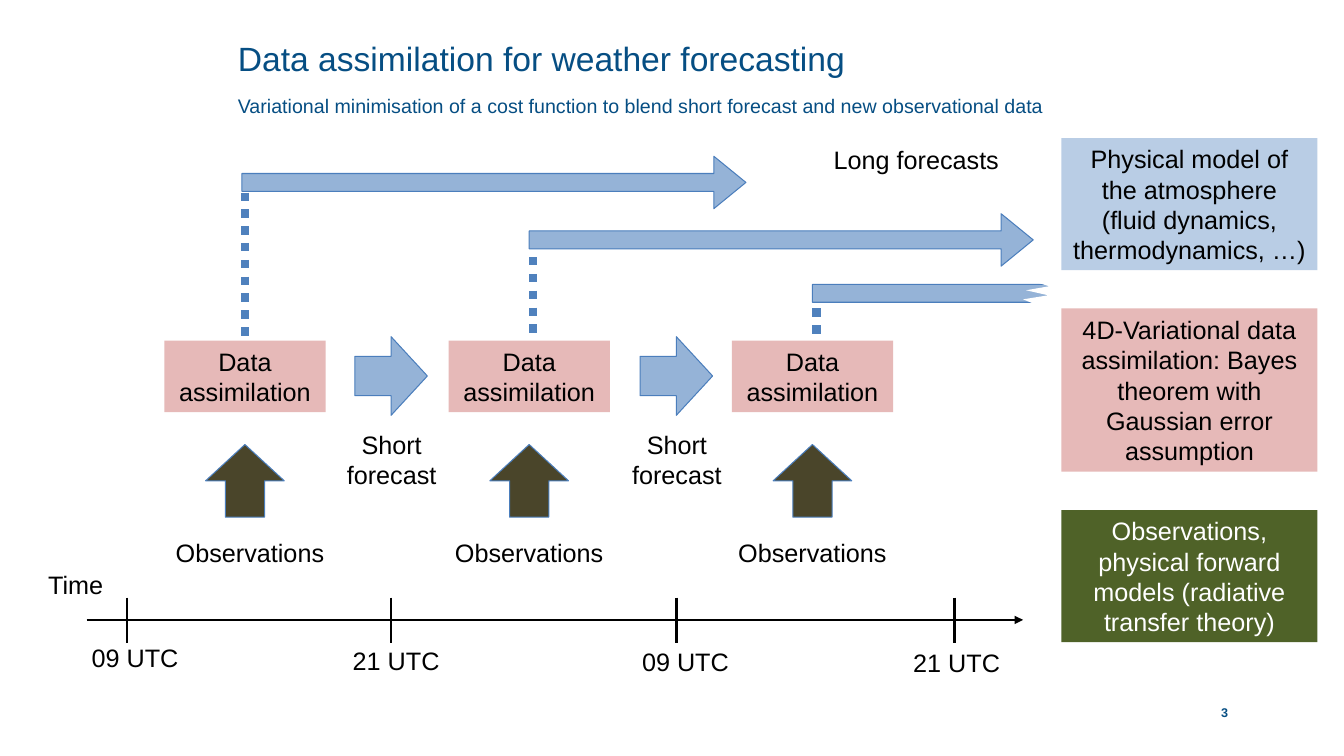
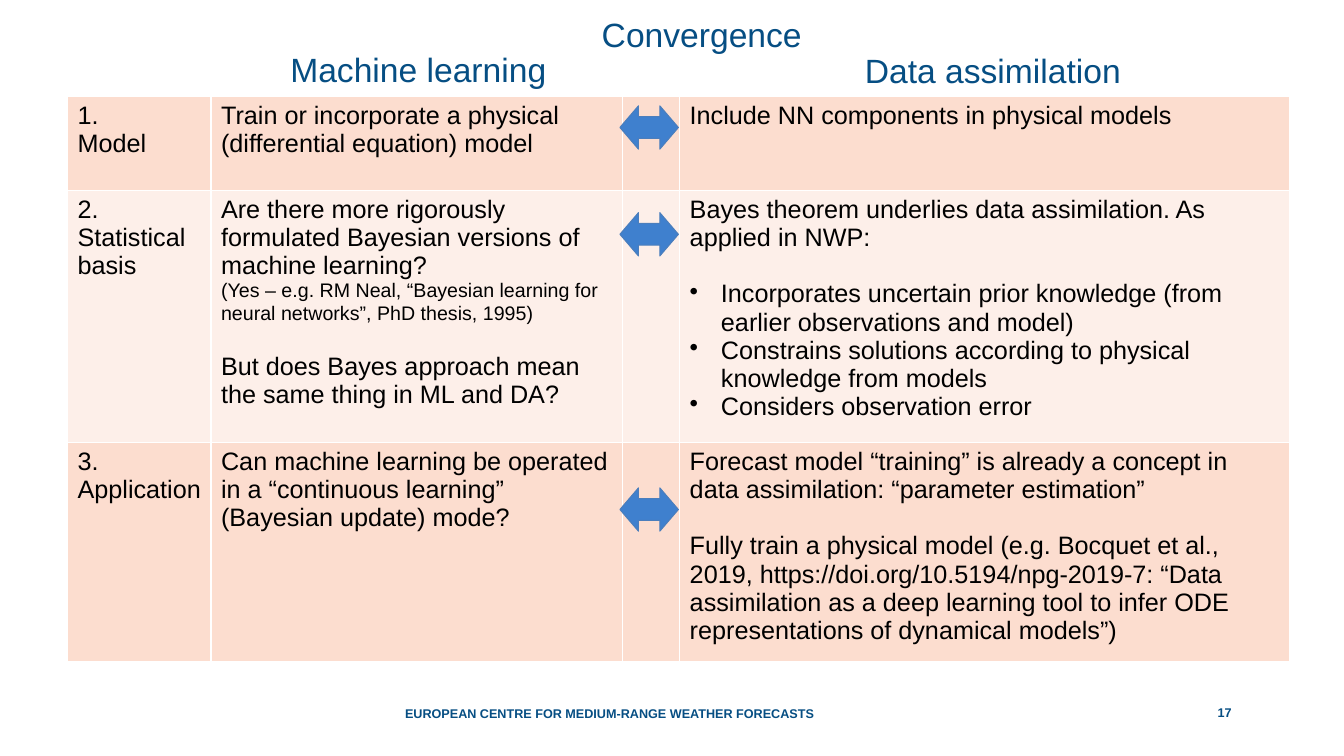
from dataclasses import dataclass

from pptx import Presentation
from pptx.dml.color import RGBColor
from pptx.enum.dml import MSO_LINE
from pptx.enum.shapes import MSO_CONNECTOR, MSO_SHAPE
from pptx.enum.text import MSO_ANCHOR, PP_ALIGN
from pptx.oxml.ns import qn
from pptx.util import Inches, Pt
from lxml.etree import SubElement

WIDTH, HEIGHT = Inches(13.33), Inches(7.5)
COLS, ROWS = 40, 30


@dataclass(frozen=True)
class Theme:
    font: str = "Arial"
    navy: str = "064E83"
    black: str = "000000"
    white: str = "FFFFFF"
    pink: str = "E6B9B8"
    sky: str = "B9CDE5"
    green: str = "4F6228"
    brown: str = "4A452A"
    arrow: str = "95B3D7"
    link: str = "3F80CE"
    outline: str = "4B7EBC"
    dots: str = "4F81BD"
    band: tuple = ("FCDDCF", "FDEFE9")
    title: int = 24
    body: int = 18
    small: int = 14
    footer: int = 9
    title_pitch: int = 28
    blank_line: int = 20


T = Theme()


# Grid and colour helpers
def col(n):
    return round(WIDTH * n / COLS)


def row(n):
    return round(HEIGHT * n / ROWS)


def place(c, r, w, h):
    return col(c), row(r), col(w), row(h)


def rgb(value):
    return RGBColor.from_string(value)


# Text
def add_bullet(p, indent=0.31):
    pPr = p._p.get_or_add_pPr()
    pPr.set("marL", str(Inches(indent)))
    pPr.set("indent", str(-Inches(indent)))
    SubElement(pPr, qn("a:buChar")).set("char", "•")


def write(tf, paras, **fmt):
    """Fill a frame; each paragraph is a string or (string, own format)."""
    tf.word_wrap = True
    for i, item in enumerate([paras] if isinstance(paras, str) else paras):
        text, own = (item, {}) if isinstance(item, str) else item
        f = {**fmt, **own}
        p = tf.paragraphs[0] if i == 0 else tf.add_paragraph()
        if f.get("bullet"):
            add_bullet(p)
        p.alignment = f.get("align", PP_ALIGN.LEFT)
        if "pitch" in f:
            p.line_spacing = Pt(f["pitch"])
        if "before" in f:
            p.space_before = Pt(f["before"])
        r = p.add_run()
        r.text = text
        r.font.name = T.font
        r.font.size = Pt(f.get("size", T.body))
        r.font.bold = f.get("bold", False)
        r.font.color.rgb = rgb(f.get("color", T.black))


def add_text(s, box, paras, inset=True, anchor=MSO_ANCHOR.TOP, **fmt):
    tf = s.shapes.add_textbox(*place(*box)).text_frame
    tf.vertical_anchor = anchor
    if not inset:
        tf.margin_left = tf.margin_right = tf.margin_top = tf.margin_bottom = 0
    write(tf, paras, **fmt)


def add_label(s, box, text):
    add_text(s, box, text, align=PP_ALIGN.CENTER)


def add_heading(s, box, paras):
    add_text(s, box, paras, inset=False, size=T.title, color=T.navy,
             pitch=T.title_pitch)


def add_footer(s, box, text):
    add_text(s, box, text, inset=False, anchor=MSO_ANCHOR.BOTTOM, bold=True,
             size=T.footer, color=T.navy, align=PP_ALIGN.CENTER)


def add_page_number(s, number):
    add_footer(s, (32.91, 27.6, 7.08, 0.96), str(number))


# Shapes and lines
def paint(sp, fill, line=None):
    sp.shadow.inherit = False
    sp.fill.solid()
    sp.fill.fore_color.rgb = rgb(fill)
    if line:
        sp.line.color.rgb = rgb(line)
        sp.line.width = Pt(0.75)
    else:
        sp.line.fill.background()


def add_panel(s, box, text, fill, color=T.black):
    sp = s.shapes.add_shape(MSO_SHAPE.RECTANGLE, *place(*box))
    paint(sp, fill)
    sp.text_frame.vertical_anchor = MSO_ANCHOR.MIDDLE
    write(sp.text_frame, text, color=color, align=PP_ALIGN.CENTER)


def add_arrow(s, kind, box, fill, adjust=()):
    sp = s.shapes.add_shape(kind, *place(*box))
    paint(sp, fill, T.outline)
    for i, value in enumerate(adjust):
        sp.adjustments[i] = value


def add_line(s, start, end, color=T.black, width=2, dash=None, head=False):
    (c1, r1), (c2, r2) = start, end
    ln = s.shapes.add_connector(MSO_CONNECTOR.STRAIGHT,
                                col(c1), row(r1), col(c2), row(r2))
    ln.line.color.rgb = rgb(color)
    ln.line.width = Pt(width)
    if dash:
        ln.line.dash_style = dash
    if head:
        SubElement(ln.line._get_or_add_ln(), qn("a:tailEnd")).set("type", "triangle")
    SubElement(ln._element.spPr, qn("a:effectLst"))


def add_outline(s, points, fill):
    (x, y), *rest = [(col(c), row(r)) for c, r in points]
    builder = s.shapes.build_freeform(x, y)
    builder.add_line_segments(rest, close=True)
    paint(builder.convert_to_shape(), fill)


# Table
def border_cell(cell):
    tcPr = cell._tc.get_or_add_tcPr()
    for i, side in enumerate(("lnL", "lnR", "lnT", "lnB")):
        ln = tcPr.makeelement(qn(f"a:{side}"), {"w": str(Pt(1))})
        fill = SubElement(ln, qn("a:solidFill"))
        SubElement(fill, qn("a:srgbClr")).set("val", T.white)
        tcPr.insert(i, ln)


def add_banded_table(s, corner, widths, heights, rows):
    box = place(*corner, sum(widths), sum(heights))
    table = s.shapes.add_table(len(rows), len(widths), *box).table
    table.first_row = table.horz_banding = False
    for column, w in zip(table.columns, widths):
        column.width = col(w)
    for i, (h, cells) in enumerate(zip(heights, rows)):
        table.rows[i].height = row(h)
        for j, paras in enumerate(cells):
            cell = table.cell(i, j)
            cell.fill.solid()
            cell.fill.fore_color.rgb = rgb(T.band[i % 2])
            border_cell(cell)
            if paras:
                write(cell.text_frame, paras)


# Slides
def forecast_slide(s):
    add_heading(s, (7.08, 1.56, 25.83, 1.6), [
        "Data assimilation for weather forecasting",
        ("Variational minimisation of a cost function to blend short forecast "
         "and new observational data", {"size": T.small})])
    add_page_number(s, 3)

    # Assimilation cycles: box, label, long forecast and its dotted riser
    for box_c, label_c, long_c, long_r, dot_c, dot_top, dot_end in (
            (4.89, 4.8, 7.2, 6.2, 7.29, 7.64, 13.52),
            (13.35, 13.11, 15.75, 8.48, 15.87, 10.2, 13.36),
            (21.78, 21.54, 24.18, 10.6, 24.3, 12.24, 13.4)):
        add_panel(s, (box_c, 13.52, 4.8, 2.84), "Data assimilation", T.pink)
        add_arrow(s, MSO_SHAPE.UP_ARROW, (box_c + 1.23, 17.64, 2.34, 2.88), T.brown)
        add_label(s, (label_c, 21.12, 5.28, 1.6), "Observations")
        add_arrow(s, MSO_SHAPE.RIGHT_ARROW, (long_c, long_r, 15, 2.08),
                  T.arrow, (0.34, 0.612))
        add_line(s, (dot_c, dot_top), (dot_c, dot_end), T.dots, 6,
                 MSO_LINE.ROUND_DOT)
    add_label(s, (23.37, 5.52, 7.8, 1.6), "Long forecasts")

    # Short forecasts between cycles
    for c in (10.56, 19.05):
        add_arrow(s, MSO_SHAPE.RIGHT_ARROW, (c, 13.36, 2.16, 3.12), T.arrow)
        add_label(s, (c - 1.05, 16.84, 4.29, 2.84), "Short forecast")

    # Time axis
    add_line(s, (2.58, 24.6), (30.45, 24.6), head=True)
    add_label(s, (-0.39, 22.4, 5.28, 1.6), "Time")
    for tick, label_c, label_r, hour in (
            (3.78, 1.38, 25.28, "09"), (11.64, 9.15, 25.4, "21"),
            (20.13, 17.76, 25.44, "09"), (28.41, 25.83, 25.48, "21")):
        add_line(s, (tick, 23.72), (tick, 25.52))
        add_label(s, (label_c, label_r, 5.28, 1.6), f"{hour} UTC")

    # Torn end of the last forecast
    add_outline(s, [(30.36, 11), (31.23, 11.36), (30.54, 11.52), (31.2, 11.72),
                    (30.45, 11.88), (31.11, 12.24), (39.69, 12.88),
                    (40, 11.84), (39.93, 10.56), (38.85, 10.44)], T.white)

    # Explanations
    for r, h, fill, color, text in (
            (5.48, 5.24, T.sky, T.black,
             "Physical model of the atmosphere (fluid dynamics, thermodynamics, …)"),
            (12.24, 6.48, T.pink, T.black,
             "4D-Variational data assimilation: Bayes theorem with Gaussian "
             "error assumption"),
            (20.24, 5.24, T.green, T.white,
             "Observations, physical forward models (radiative transfer theory)")):
        add_panel(s, (31.59, r, 7.62, h), text, fill, color)


def convergence_slide(s):
    for c, r, text in ((17.91, 0.6, "Convergence"), (8.64, 2, "Machine learning"),
                       (25.74, 2.04, "Data assimilation")):
        add_heading(s, (c, r, 8.73, 1.6), text)

    gap, bullet = {"before": T.blank_line}, {"bullet": True}
    add_banded_table(s, (2.01, 3.84), (4.27, 12.24, 1.71, 18.15), (3.72, 10, 8.28), [
        (["1.", "Model"],
         "Train or incorporate a physical (differential equation) model",
         None,
         "Include NN components in physical models"),
        ("2. Statistical basis",
         ["Are there more rigorously formulated Bayesian versions of machine learning?",
          ("(Yes – e.g. RM Neal, “Bayesian learning for neural networks”, "
           "PhD thesis, 1995)", {"size": T.small}),
          ("But does Bayes approach mean the same thing in ML and DA?", gap)],
         None,
         ["Bayes theorem underlies data assimilation. As applied in NWP:",
          ("Incorporates uncertain prior knowledge (from earlier observations "
           "and model)", {**bullet, **gap}),
          ("Constrains solutions according to physical knowledge from models", bullet),
          ("Considers observation error", bullet)]),
        ("3. Application",
         "Can machine learning be operated in a “continuous learning” "
         "(Bayesian update) mode?",
         None,
         ["Forecast model “training” is already a concept in data assimilation: "
          "“parameter estimation”",
          ("Fully train a physical model (e.g. Bocquet et al., 2019, "
           "https://doi.org/10.5194/npg-2019-7: “Data assimilation as a deep "
           "learning tool to infer ODE representations of dynamical models”)", gap)]),
    ])
    for r in (4.2, 8.44, 19.36):
        add_arrow(s, MSO_SHAPE.LEFT_RIGHT_ARROW, (18.45, r, 1.74, 1.72),
                  T.link, (0.5, 0.428))

    add_page_number(s, 17)
    add_footer(s, (11.49, 27.6, 13.29, 1),
               "EUROPEAN CENTRE FOR MEDIUM-RANGE WEATHER FORECASTS")


def main():
    prs = Presentation()
    prs.slide_width, prs.slide_height = WIDTH, HEIGHT
    for build in (forecast_slide, convergence_slide):
        build(prs.slides.add_slide(prs.slide_layouts[6]))
    prs.save("out.pptx")


if __name__ == "__main__":
    main()
